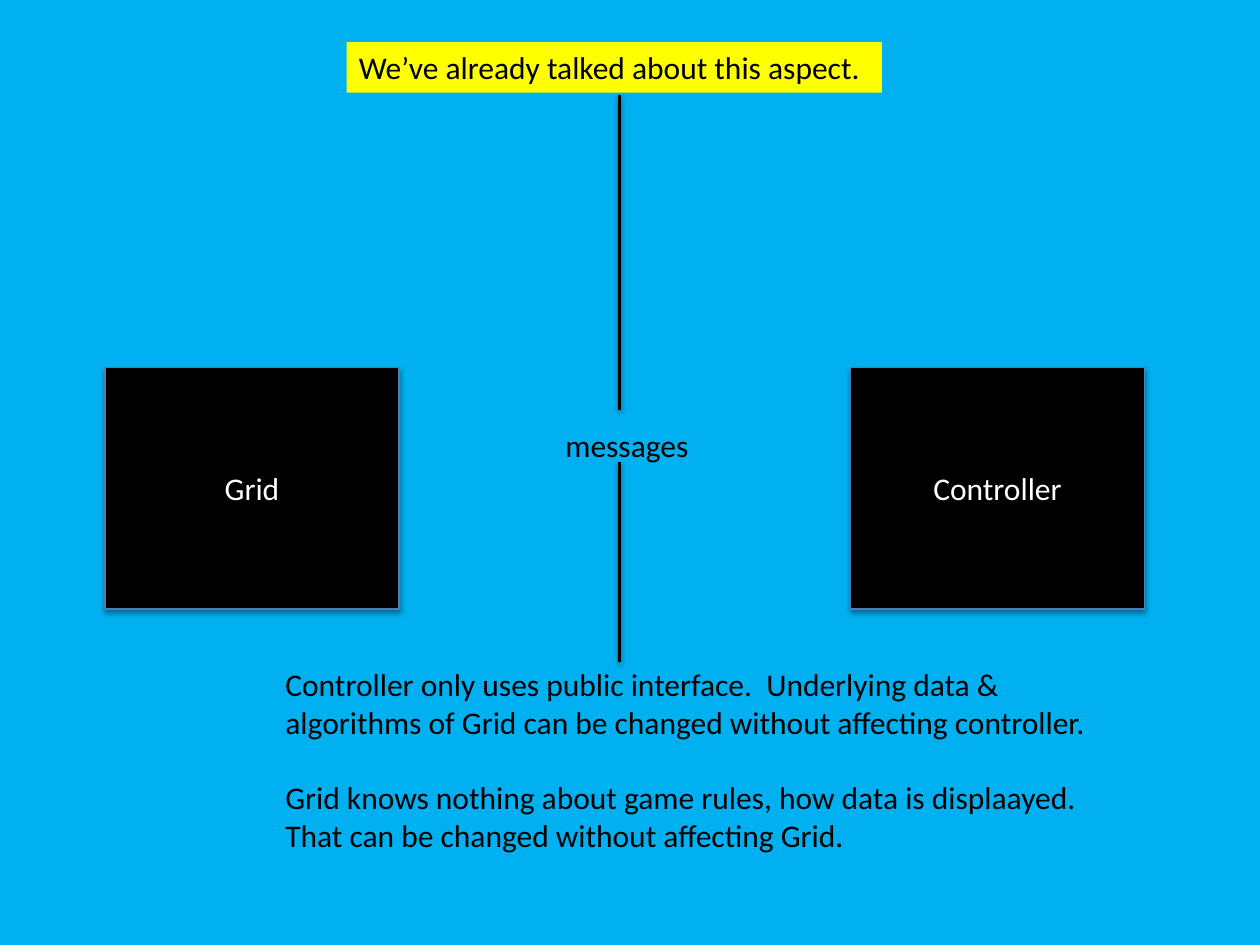
"""Build the slide on messages between Grid and Controller."""
from lxml import etree
from pptx import Presentation
from pptx.dml.color import RGBColor
from pptx.enum import shapes, text
from pptx.oxml import ns
from pptx.util import Pt

COLOURS = {"sky": "00B0F0", "black": "000000", "white": "FFFFFF",
           "edge": "4B7EBC", "yellow": "FFFF00"}
COLOURS = {name: RGBColor.from_string(value) for name, value in COLOURS.items()}


def cast_shadow(item, opacity, distance):
    effects = etree.SubElement(item._element.spPr, ns.qn("a:effectLst"))
    shadow = etree.SubElement(effects, ns.qn("a:outerShdw"), blurRad=str(Pt(3.1)),
                              dist=str(Pt(distance)), dir="5400000", rotWithShape="0")
    colour = etree.SubElement(shadow, ns.qn("a:srgbClr"), val="000000")
    etree.SubElement(colour, ns.qn("a:alpha"), val=str(opacity * 1000))


def write(frame, lines, colour):
    frame.text = "\n".join(lines)
    for para in frame.paragraphs:
        for span in para.runs:
            span.font.name = "Calibri"
            span.font.size = Pt(18)
            span.font.color.rgb = COLOURS[colour]


deck = Presentation()
deck.slide_width, deck.slide_height = Pt(720), Pt(540)
page = deck.slides.add_slide(deck.slide_layouts[6])
page.background.fill.solid()
page.background.fill.fore_color.rgb = COLOURS["sky"]

for label, left in [("Grid", 60), ("Controller", 486)]:
    box = page.shapes.add_shape(shapes.MSO_SHAPE.RECTANGLE,
                                Pt(left), Pt(210), Pt(168), Pt(138))
    box.fill.solid()
    box.fill.fore_color.rgb = COLOURS["black"]
    box.line.color.rgb = COLOURS["edge"]
    box.line.width = Pt(0.75)
    cast_shadow(box, 35, 1.8)
    write(box.text_frame, [label], "white")
    box.text_frame.vertical_anchor = text.MSO_ANCHOR.MIDDLE
    box.text_frame.paragraphs[0].alignment = text.PP_ALIGN.CENTER

for top, bottom in [(54, 234), (264, 378)]:
    divider = page.shapes.add_connector(shapes.MSO_CONNECTOR.STRAIGHT,
                                        Pt(354), Pt(top), Pt(354), Pt(bottom))
    divider.line.color.rgb = COLOURS["black"]
    divider.line.width = Pt(2)
    cast_shadow(divider, 38, 1.6)

notes = [
    (316, 240, 86, 29, False, ["messages"]),
    (156, 376.5, 474, 181.5, True, [
        "Controller only uses public interface.  Underlying data & "
        "algorithms of Grid can be changed without affecting controller.",
        "Grid knows nothing about game rules, how data is displaayed.  "
        "That can be changed without affecting Grid."]),
    (198, 24, 306, 29, True, ["We’ve already talked about this aspect."]),
]
for left, top, width, height, wraps, lines in notes:
    note = page.shapes.add_textbox(Pt(left), Pt(top), Pt(width), Pt(height))
    note.text_frame.word_wrap = wraps
    write(note.text_frame, lines, "black")
    for para in note.text_frame.paragraphs[1:]:
        para.space_before = Pt(21.6)

note.fill.solid()
note.fill.fore_color.rgb = COLOURS["yellow"]

deck.save("out.pptx")
